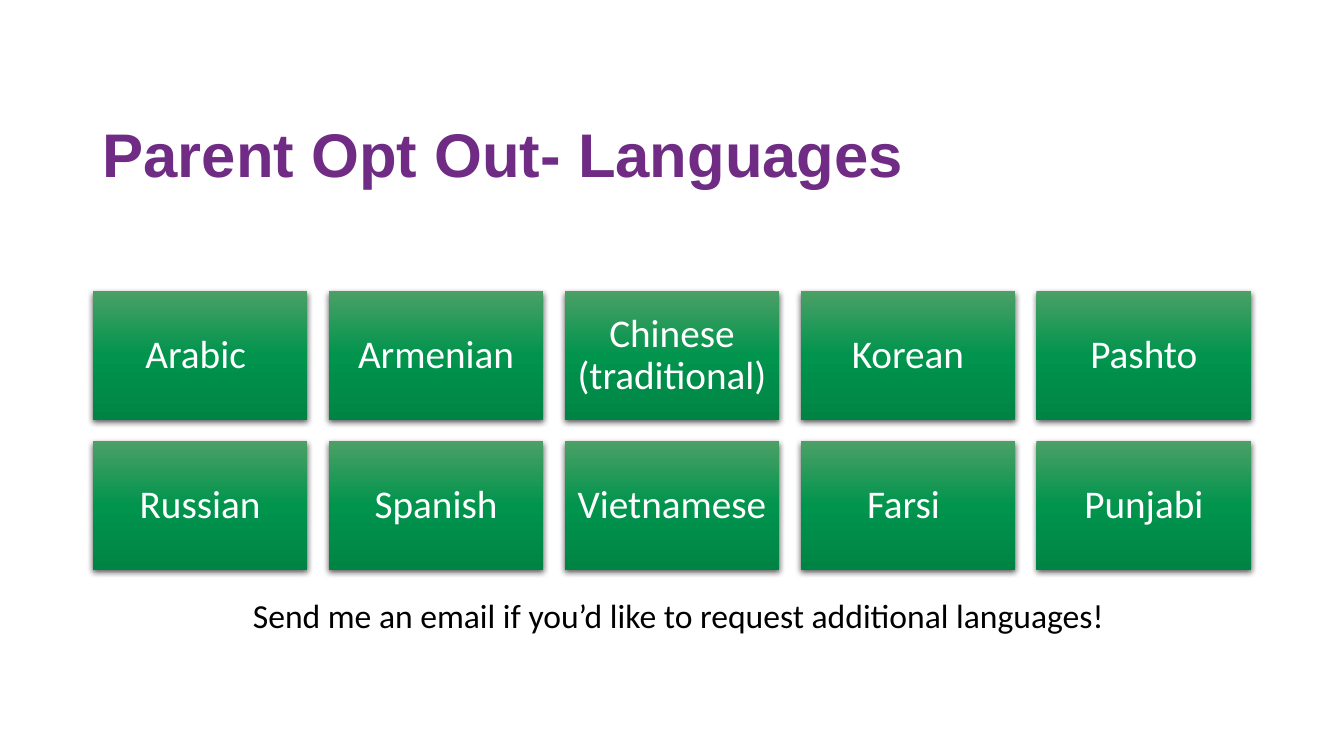
from pptx import Presentation
from pptx.dml.color import RGBColor
from pptx.enum.shapes import MSO_SHAPE
from pptx.enum.text import MSO_ANCHOR, PP_ALIGN
from pptx.oxml import parse_xml
from pptx.oxml.ns import nsdecls
from pptx.util import Inches, Pt

PURPLE = RGBColor(0x70, 0x2B, 0x84)
WHITE = RGBColor(0xFF, 0xFF, 0xFF)
BLACK = RGBColor(0x00, 0x00, 0x00)
GREEN_LIGHT = RGBColor(0x4B, 0xA0, 0x66)
GREEN = RGBColor(0x00, 0x94, 0x4D)
GREEN_DARK = RGBColor(0x00, 0x84, 0x44)

STOPS = "".join(
    f'<a:gs pos="{pos}"><a:srgbClr val="{color}"/></a:gs>'
    for pos, color in [(0, GREEN_LIGHT), (50000, GREEN), (100000, GREEN_DARK)]
)
GRADIENT = (
    f'<a:gradFill {nsdecls("a")} rotWithShape="1"><a:gsLst>{STOPS}</a:gsLst>'
    '<a:lin ang="5400000" scaled="0"/></a:gradFill>'
)
SHADOW = (
    f'<a:effectLst {nsdecls("a")}><a:outerShdw blurRad="{Pt(4.5)}" dist="{Pt(1.5)}" '
    'dir="5400000" algn="ctr" rotWithShape="0">'
    f'<a:srgbClr val="{BLACK}"><a:alpha val="63000"/></a:srgbClr>'
    '</a:outerShdw></a:effectLst>'
)


def write(sp, text, size, color, font="Calibri", bold=False, align=PP_ALIGN.LEFT,
          anchor=MSO_ANCHOR.TOP, spacing=1.0, wrap=True):
    tf = sp.text_frame
    tf.word_wrap = wrap
    tf.vertical_anchor = anchor
    p = tf.paragraphs[0]
    p.alignment = align
    p.line_spacing = spacing
    r = p.add_run()
    r.text = text
    r.font.name = font
    r.font.size = Pt(size)
    r.font.bold = bold
    r.font.color.rgb = color
    return tf


prs = Presentation()
prs.slide_width = Inches(13.33)
prs.slide_height = Inches(7.5)
s = prs.slides.add_slide(prs.slide_layouts[6])

title = s.shapes.add_textbox(Inches(0.92), Inches(0.84), Inches(11.5), Inches(1.45))
write(title, "Parent Opt Out- Languages", 44, PURPLE, font="Arial", bold=True,
      anchor=MSO_ANCHOR.MIDDLE, spacing=0.9)

languages = [
    ["Arabic ", "Armenian", "Chinese (traditional)", "Korean", "Pashto"],
    ["Russian", "Spanish", "Vietnamese", "Farsi ", "Punjabi"],
]
for row, names in enumerate(languages):
    for col, name in enumerate(names):
        sp = s.shapes.add_shape(
            MSO_SHAPE.RECTANGLE,
            Inches(0.92 + 2.34 * col), Inches(2.89 + 1.49 * row),
            Inches(2.13), Inches(1.28),
        )
        props = sp.element.spPr
        props.append(parse_xml(GRADIENT))
        sp.line.fill.background()
        props.append(parse_xml(SHADOW))
        tf = write(sp, name, 28, WHITE, align=PP_ALIGN.CENTER,
                   anchor=MSO_ANCHOR.MIDDLE, spacing=0.9)
        tf.margin_left = tf.margin_right = Inches(0.12)
        tf.margin_top = tf.margin_bottom = Inches(0.12)

note = s.shapes.add_textbox(Inches(2.41), Inches(5.85), Inches(8.73), Inches(0.5))
write(note, "Send me an email if you’d like to request additional languages!",
      24, BLACK, wrap=False)

prs.save("out.pptx")
